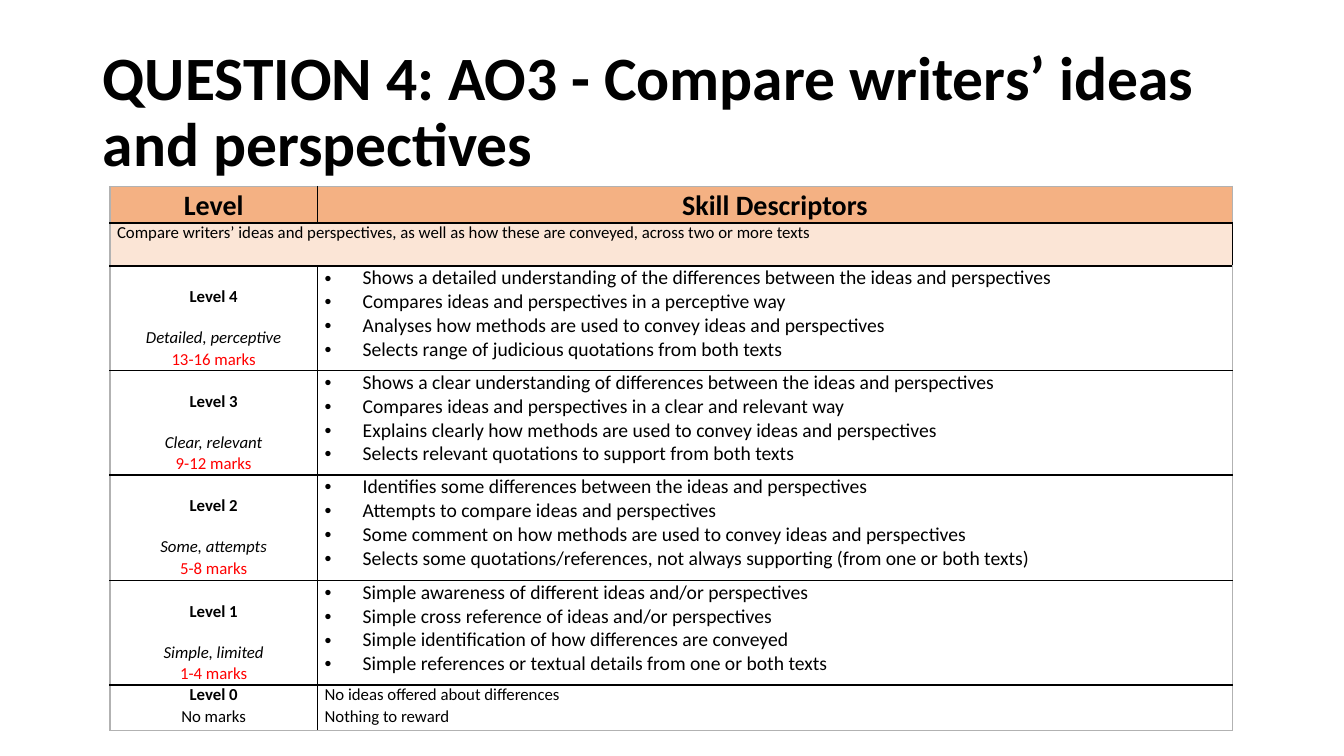
from dataclasses import dataclass

from lxml import etree
from pptx import Presentation
from pptx.dml.color import RGBColor
from pptx.enum.text import MSO_ANCHOR, PP_ALIGN
from pptx.oxml.ns import qn
from pptx.util import Cm, Pt

LEFT, CENTER = PP_ALIGN.LEFT, PP_ALIGN.CENTER
MIDDLE = MSO_ANCHOR.MIDDLE
FONT = "Calibri"
BLACK, RED, WHITE, GREY = "000000", "FF0000", "FFFFFF", "B2B2B2"
ORANGE, PEACH = "F4B183", "FBE5D6"
BLANK_LINE = 14.65
COL_WIDTHS = [5.23, 23.06]
ROW_HEIGHTS = [0.92, 1.09, 2.63, 2.63, 2.66, 2.63, 1.14]
HEADER_ROWS = 2


@dataclass
class Line:
    text: str
    size: float = 12
    bold: bool = False
    italic: bool = False
    color: str = BLACK
    align: PP_ALIGN = LEFT
    spacing: float = 1.0
    before: float = 0
    bullet: bool = False


@dataclass
class Level:
    name: str
    summary: str
    marks: str
    skills: list[str]


LEVELS = [
    Level("Level 4", "Detailed, perceptive", "13-16 marks", [
        "Shows a detailed understanding of the differences between the ideas and perspectives",
        "Compares ideas and perspectives in a perceptive way",
        "Analyses how methods are used to convey ideas and perspectives",
        "Selects range of judicious quotations from both texts",
    ]),
    Level("Level 3", "Clear, relevant", "9-12 marks", [
        "Shows a clear understanding of differences between the ideas and perspectives",
        "Compares ideas and perspectives in a clear and relevant way",
        "Explains clearly how methods are used to convey ideas and perspectives",
        "Selects relevant quotations to support from both texts",
    ]),
    Level("Level 2", "Some, attempts", "5-8 marks", [
        "Identifies some differences between the ideas and perspectives",
        "Attempts to compare ideas and perspectives",
        "Some comment on how methods are used to convey ideas and perspectives",
        "Selects some quotations/references, not always supporting (from one or both texts)",
    ]),
    Level("Level 1", "Simple, limited", "1-4 marks", [
        "Simple awareness of different ideas and/or perspectives",
        "Simple cross reference of ideas and/or perspectives",
        "Simple identification of how differences are conveyed",
        "Simple references or textual details from one or both texts",
    ]),
]


def rgb(value: str) -> RGBColor:
    return RGBColor.from_string(value)


def set_attrs(obj, values: dict) -> None:
    for name, value in values.items():
        setattr(obj, name, value)


def add_bullet(p) -> None:
    pPr = p._p.get_or_add_pPr()
    pPr.set("marL", str(Cm(0.96)))
    pPr.set("indent", str(-Cm(0.96)))
    etree.SubElement(pPr, qn("a:buFont"), typeface="Arial")
    etree.SubElement(pPr, qn("a:buChar"), char="•")


def write_lines(tf, lines: list[Line]) -> None:
    tf.word_wrap = True
    for i, line in enumerate(lines):
        p = tf.add_paragraph() if i else tf.paragraphs[0]
        set_attrs(p, {"alignment": line.align, "line_spacing": line.spacing,
                      "space_before": Pt(line.before), "space_after": Pt(0)})
        if line.bullet:
            add_bullet(p)
        r = p.add_run()
        r.text = line.text
        set_attrs(r.font, {"name": FONT, "size": Pt(line.size),
                           "bold": line.bold, "italic": line.italic})
        r.font.color.rgb = rgb(line.color)


def add_border(cell, side: str, color: str, width: float) -> None:
    ln = etree.SubElement(cell._tc.get_or_add_tcPr(), qn(f"a:ln{side}"), w=str(Pt(width)))
    fill = etree.SubElement(ln, qn("a:solidFill"))
    etree.SubElement(fill, qn("a:srgbClr"), val=color)


def style_cell(table, row: int, col: int, fill: str) -> None:
    cell = table.cell(row, col)
    last_row, last_col = len(ROW_HEIGHTS) - 1, len(COL_WIDTHS) - 1
    add_border(cell, "L", BLACK if col else GREY, 1)
    add_border(cell, "R", GREY if col == last_col else BLACK, 1)
    add_border(cell, "T", BLACK if row else GREY, 1.5 if 0 < row <= HEADER_ROWS else 1)
    add_border(cell, "B", GREY if row == last_row else BLACK, 1.5 if row < HEADER_ROWS else 1)
    cell.fill.solid()
    cell.fill.fore_color.rgb = rgb(fill)
    set_attrs(cell, {"margin_left": Cm(0.18), "margin_right": Cm(0.18),
                     "margin_top": 0, "margin_bottom": 0})


def level_lines(level: Level) -> list[Line]:
    return [
        Line(level.name, bold=True, align=CENTER),
        Line(level.summary, italic=True, align=CENTER, before=BLANK_LINE),
        Line(level.marks, color=RED, align=CENTER, spacing=1.07),
    ]


def add_title(slide, text: str) -> None:
    sp = slide.shapes.add_textbox(Cm(2.34), Cm(1.02), Cm(29.21), Cm(3.68))
    sp.text_frame.vertical_anchor = MIDDLE
    write_lines(sp.text_frame, [Line(text, size=44, bold=True, spacing=0.9)])


def add_levels_table(slide) -> None:
    rows = [
        [[Line(text, size=20, bold=True, align=CENTER, spacing=1.07)]
         for text in ("Level", "Skill Descriptors")],
        [[Line("Compare writers’ ideas and perspectives, as well as how these "
               "are conveyed, across two or more texts")]],
        *[[level_lines(level), [Line(skill, size=14, bullet=True) for skill in level.skills]]
          for level in LEVELS],
        [[Line("Level 0", bold=True, align=CENTER), Line("No marks", align=CENTER, spacing=1.07)],
         [Line("No ideas offered about differences"), Line("Nothing to reward", spacing=1.07)]],
    ]
    fills = [ORANGE, PEACH] + [WHITE] * (len(rows) - HEADER_ROWS)
    sp = slide.shapes.add_table(len(rows), len(COL_WIDTHS), Cm(2.77), Cm(4.7),
                                Cm(sum(COL_WIDTHS)), Cm(sum(ROW_HEIGHTS)))
    table = sp.table
    set_attrs(table, {"first_row": False, "horz_banding": False})
    for column, width in zip(table.columns, COL_WIDTHS):
        column.width = Cm(width)
    for row, height in zip(table.rows, ROW_HEIGHTS):
        row.height = Cm(height)
    table.cell(1, 0).merge(table.cell(1, 1))
    for i, (row, fill) in enumerate(zip(rows, fills)):
        for j in range(len(COL_WIDTHS)):
            style_cell(table, i, j, fill)
        for j, lines in enumerate(row):
            write_lines(table.cell(i, j).text_frame, lines)
    for i in range(HEADER_ROWS, HEADER_ROWS + len(LEVELS)):
        table.cell(i, 0).margin_top = Pt(BLANK_LINE)


def main() -> None:
    prs = Presentation()
    set_attrs(prs, {"slide_width": Cm(33.87), "slide_height": Cm(19.05)})
    slide = prs.slides.add_slide(prs.slide_layouts[6])
    add_title(slide, "QUESTION 4: AO3 - Compare writers’ ideas and perspectives")
    add_levels_table(slide)
    prs.save("out.pptx")


if __name__ == "__main__":
    main()
